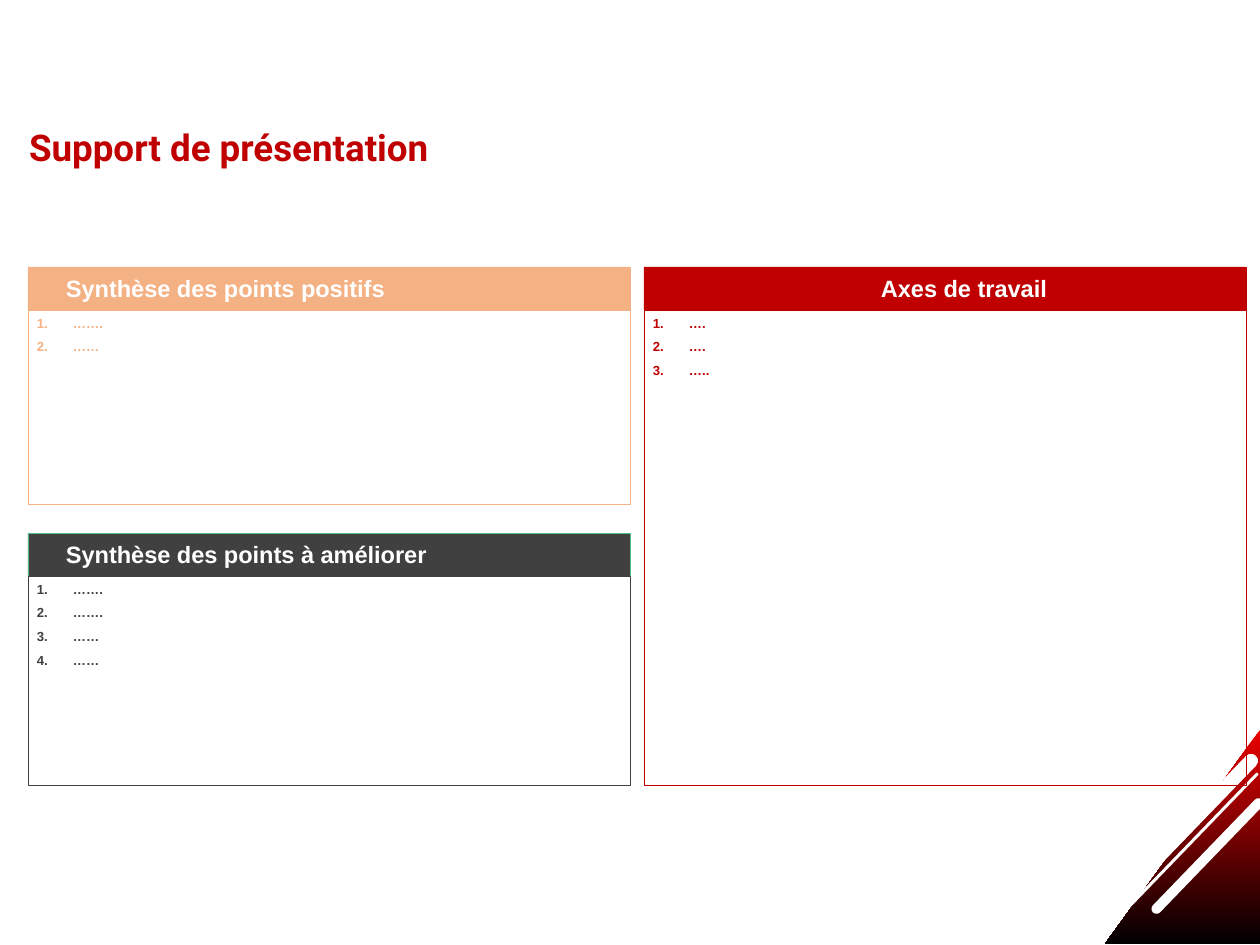
from dataclasses import dataclass

from lxml import etree
from pptx import Presentation, util as u
from pptx.dml.color import RGBColor
from pptx.enum import shapes, text
from pptx.oxml import ns

EMU_PER_PX = 914400 / 126


def px(length):
    return u.Emu(round(length * EMU_PER_PX))


def rgb(code):
    return RGBColor.from_string(code)


def apply(target, values):
    for name, value in values.items():
        setattr(target, name, value)


@dataclass(frozen=True)
class Theme:
    red: str = "C00000"
    orange: str = "F4B183"
    grey: str = "404040"
    green: str = "50BE87"
    white: str = "FFFFFF"
    bright: str = "EA0000"
    black: str = "000000"
    title_size: float = 21
    heading_size: float = 13.5
    item_size: float = 7.5
    line_width: float = 0.25
    space_after: float = 4.5
    title_font: str = "Roboto"
    body_font: str = "Arial"


class SlideBuilder:
    def __init__(self, page, theme):
        self.page = page
        self.theme = theme

    def shape(self, kind, bounds, fill=None, line=None):
        shape = self.page.shapes.add_shape(kind, *map(px, bounds))
        shape.shadow.inherit = False
        if fill:
            shape.fill.solid()
            shape.fill.fore_color.rgb = rgb(fill)
        else:
            shape.fill.background()
        if line:
            shape.line.color.rgb = rgb(line)
            shape.line.width = u.Pt(self.theme.line_width)
        else:
            shape.line.fill.background()
        return shape

    def frame(self, shape, anchor, insets):
        sides = ("margin_left", "margin_top", "margin_right", "margin_bottom")
        values = dict(zip(sides, map(px, insets)))
        apply(shape.text_frame, values | {"word_wrap": True, "vertical_anchor": anchor})
        return shape.text_frame

    def add_words(self, para, words, size, color, font, align=text.PP_ALIGN.LEFT):
        para.alignment = align
        span = para.add_run()
        span.text = words
        apply(span.font, {"name": font, "size": u.Pt(size), "bold": True})
        span.font.color.rgb = rgb(color)

    def number(self, para, color):
        """Give the paragraph an automatic number with a hanging indent."""
        props = para._p.get_or_add_pPr()
        props.set("marL", str(px(36)))
        props.set("indent", str(-px(36)))
        bullet_color = etree.SubElement(props, ns.qn("a:buClr"))
        etree.SubElement(bullet_color, ns.qn("a:srgbClr"), val=color)
        etree.SubElement(props, ns.qn("a:buAutoNum"), type="arabicPeriod")

    def title(self, words, bounds):
        theme = self.theme
        box = self.page.shapes.title
        apply(box, dict(zip(("left", "top", "width", "height"), map(px, bounds))))
        frame = self.frame(box, text.MSO_ANCHOR.BOTTOM, (13, 6, 13, 6))
        frame.auto_size = text.MSO_AUTO_SIZE.NONE
        self.add_words(frame.paragraphs[0], words, theme.title_size, theme.red,
                       theme.title_font)

    def panel(self, bounds, heading, items, color, edge=None, align=text.PP_ALIGN.LEFT):
        """Draw a filled heading bar above an outlined numbered list."""
        theme = self.theme
        left, top, width, height = bounds
        bar_height = 43
        rectangle = shapes.MSO_SHAPE.RECTANGLE

        bar = self.shape(rectangle, (left, top, width, bar_height), color, edge or color)
        frame = self.frame(bar, text.MSO_ANCHOR.MIDDLE, (38, 6, 0, 6))
        self.add_words(frame.paragraphs[0], heading, theme.heading_size, theme.white,
                       theme.body_font, align)

        body = self.shape(rectangle, (left, top + bar_height, width, height - bar_height),
                          line=color)
        frame = self.frame(body, text.MSO_ANCHOR.TOP, (9, 5, 9, 5))
        for index, item in enumerate(items):
            para = frame.add_paragraph() if index else frame.paragraphs[0]
            self.number(para, color)
            para.space_after = u.Pt(theme.space_after)
            self.add_words(para, item, theme.item_size, color, theme.body_font)

    def corner(self, bounds, stripes):
        """Draw the gradient triangle crossed by slanted white stripes."""
        theme = self.theme
        triangle = self.shape(shapes.MSO_SHAPE.RIGHT_TRIANGLE, bounds)
        triangle._element.spPr.find(ns.qn("a:xfrm")).set("flipH", "1")
        triangle.fill.gradient()
        triangle.fill.gradient_angle = 270
        for stop, color, position in zip(triangle.fill.gradient_stops,
                                         (theme.bright, theme.black), (0, 1)):
            stop.color.rgb = rgb(color)
            stop.position = position
        for stripe in stripes:
            bar = self.shape(shapes.MSO_SHAPE.ROUNDED_RECTANGLE, stripe, theme.white)
            bar.adjustments[0] = 0.5
            bar.rotation = 314


def main():
    deck = Presentation()
    deck.slide_width, deck.slide_height = px(1260), px(945)
    theme = Theme()
    builder = SlideBuilder(deck.slides.add_slide(deck.slide_layouts[5]), theme)

    builder.corner((1105, 730, 155, 214), [
        (1067, 829, 223, 14),
        (1129, 851, 157, 10),
        (1097, 840, 190, 3),
    ])

    left, top, width, gap, bottom = 28, 267, 602, 14, 785
    lower_top = 533
    builder.panel((left, top, width, 237), "Synthèse des points positifs",
                  ["…….", "……"], theme.orange)
    builder.panel((left + width + gap, top, width, bottom - top), "Axes de travail",
                  ["….", "….", "….."], theme.red, align=text.PP_ALIGN.CENTER)
    builder.panel((left, lower_top, width, bottom - lower_top),
                  "Synthèse des points à améliorer",
                  ["…….", "…….", "……", "……"], theme.grey, edge=theme.green)
    builder.title("Support de présentation", (16, 103, 1125, 72))

    deck.save("out.pptx")


if __name__ == "__main__":
    main()
